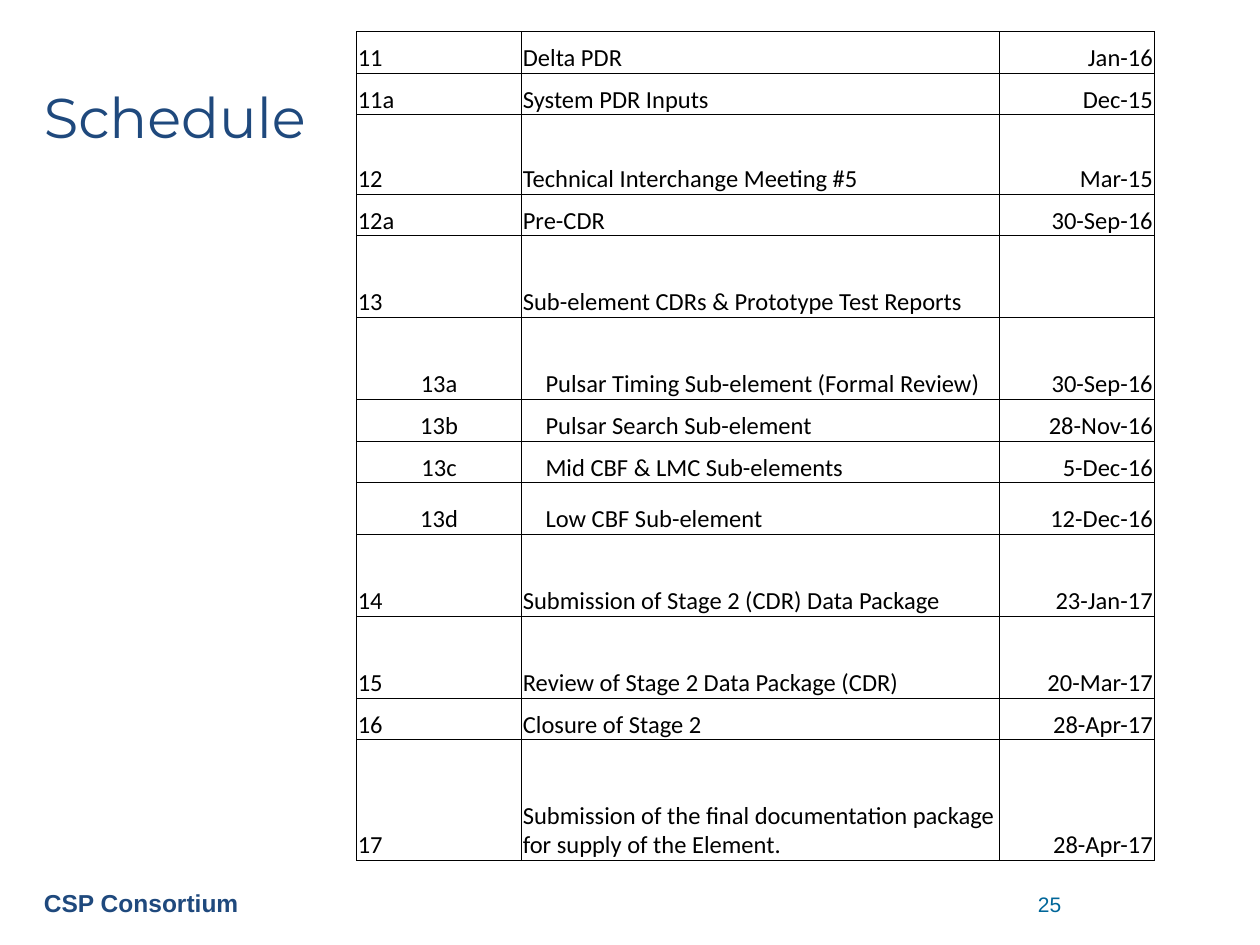
from lxml.etree import SubElement
from pptx import Presentation
from pptx.dml.color import RGBColor
from pptx.enum.text import MSO_ANCHOR, PP_ALIGN
from pptx.oxml.ns import qn
from pptx.util import Inches, Pt

NAVY = RGBColor(0x1F, 0x49, 0x7D)
TEAL = RGBColor(0x00, 0x66, 0x99)
BLACK = RGBColor(0, 0, 0)

COLUMN_WIDTHS = [1.31, 3.79, 1.23]
LOW, MIDDLE, HIGH, DOUBLE, TALL = 0.33, 0.41, 0.63, 0.65, 0.96
CELL_MARGIN = 0.01
SUB_ITEM_INDENT = 0.19
BORDER_WIDTH = Pt(0.5)

MILESTONES = [
    (LOW, "11", "Delta PDR", "\u00a0Jan-16"),
    (LOW, "11a", "System PDR Inputs", "Dec-15"),
    (HIGH, "12", "Technical Interchange Meeting #5", "Mar-15"),
    (LOW, "12a", "Pre-CDR", "30-Sep-16"),
    (DOUBLE, "13", "Sub-element CDRs & Prototype Test Reports", ""),
    (DOUBLE, "13a", "Pulsar Timing Sub-element (Formal Review)", "30-Sep-16"),
    (LOW, "13b", "Pulsar Search Sub-element", "28-Nov-16"),
    (LOW, "13c", "Mid CBF & LMC Sub-elements", "5-Dec-16"),
    (MIDDLE, "13d", "Low CBF Sub-element", "12-Dec-16"),
    (DOUBLE, "14", "Submission of Stage 2 (CDR) Data Package", "23-Jan-17"),
    (DOUBLE, "15", "Review of Stage 2 Data Package (CDR)", "20-Mar-17"),
    (LOW, "16", "Closure of Stage 2", "28-Apr-17"),
    (TALL, "17", "Submission of the final documentation package for supply of the Element.", "28-Apr-17"),
]
SUB_ITEMS = {"13a", "13b", "13c", "13d"}


def style_paragraph(para, font_name, size, color, align=PP_ALIGN.LEFT, bold=False):
    para.alignment = align
    para.font.name = font_name
    para.font.size = Pt(size)
    para.font.color.rgb = color
    para.font.bold = bold


def add_text(page, text, left, top, width, height, *style, anchor=MSO_ANCHOR.TOP, **options):
    box = page.shapes.add_textbox(Inches(left), Inches(top), Inches(width), Inches(height))
    frame = box.text_frame
    frame.word_wrap = True
    frame.vertical_anchor = anchor
    frame.text = text
    style_paragraph(frame.paragraphs[0], *style, **options)


def add_borders(cell):
    properties = cell._tc.get_or_add_tcPr()
    for side in ("a:lnL", "a:lnR", "a:lnT", "a:lnB"):
        line = SubElement(properties, qn(side), w=str(BORDER_WIDTH))
        fill = SubElement(line, qn("a:solidFill"))
        SubElement(fill, qn("a:srgbClr"), val=str(BLACK))


def fill_cell(cell, text, align, indent):
    cell.text = text
    cell.vertical_anchor = MSO_ANCHOR.BOTTOM
    cell.margin_left = Inches(indent)
    cell.margin_right = cell.margin_top = Inches(CELL_MARGIN)
    cell.margin_bottom = 0
    add_borders(cell)
    cell.fill.background()
    style_paragraph(cell.text_frame.paragraphs[0], "Calibri", 14, BLACK, align)


def add_schedule(page, left, top):
    width = sum(COLUMN_WIDTHS)
    height = sum(milestone[0] for milestone in MILESTONES)
    table = page.shapes.add_table(
        len(MILESTONES), len(COLUMN_WIDTHS),
        Inches(left), Inches(top), Inches(width), Inches(height),
    ).table
    table.first_row = False
    table.horz_banding = False
    for column, column_width in zip(table.columns, COLUMN_WIDTHS):
        column.width = Inches(column_width)
    for row, (row_height, number, title, date) in zip(table.rows, MILESTONES):
        row.height = Inches(row_height)
        nested = number in SUB_ITEMS
        number_cell, title_cell, date_cell = row.cells
        fill_cell(number_cell, number, PP_ALIGN.CENTER if nested else PP_ALIGN.LEFT, CELL_MARGIN)
        fill_cell(title_cell, title, PP_ALIGN.LEFT, SUB_ITEM_INDENT if nested else CELL_MARGIN)
        fill_cell(date_cell, date, PP_ALIGN.RIGHT, CELL_MARGIN)


def main():
    deck = Presentation()
    deck.slide_width = Inches(10)
    deck.slide_height = Inches(7.5)
    page = deck.slides.add_slide(deck.slide_layouts[6])
    add_text(page, "CSP Consortium", 0.25, 7, 4.75, 0.34, "Arial", 14, NAVY, bold=True)
    add_text(page, "25", 7.83, 7.03, 1, 0.3, "Arial", 12, TEAL, PP_ALIGN.CENTER)
    add_text(page, "Schedule", 0.25, 0.3, 9.5, 1.25, "Montserrat", 32, NAVY, anchor=MSO_ANCHOR.MIDDLE)
    add_schedule(page, 2.83, 0.25)
    deck.save("out.pptx")


if __name__ == "__main__":
    main()
